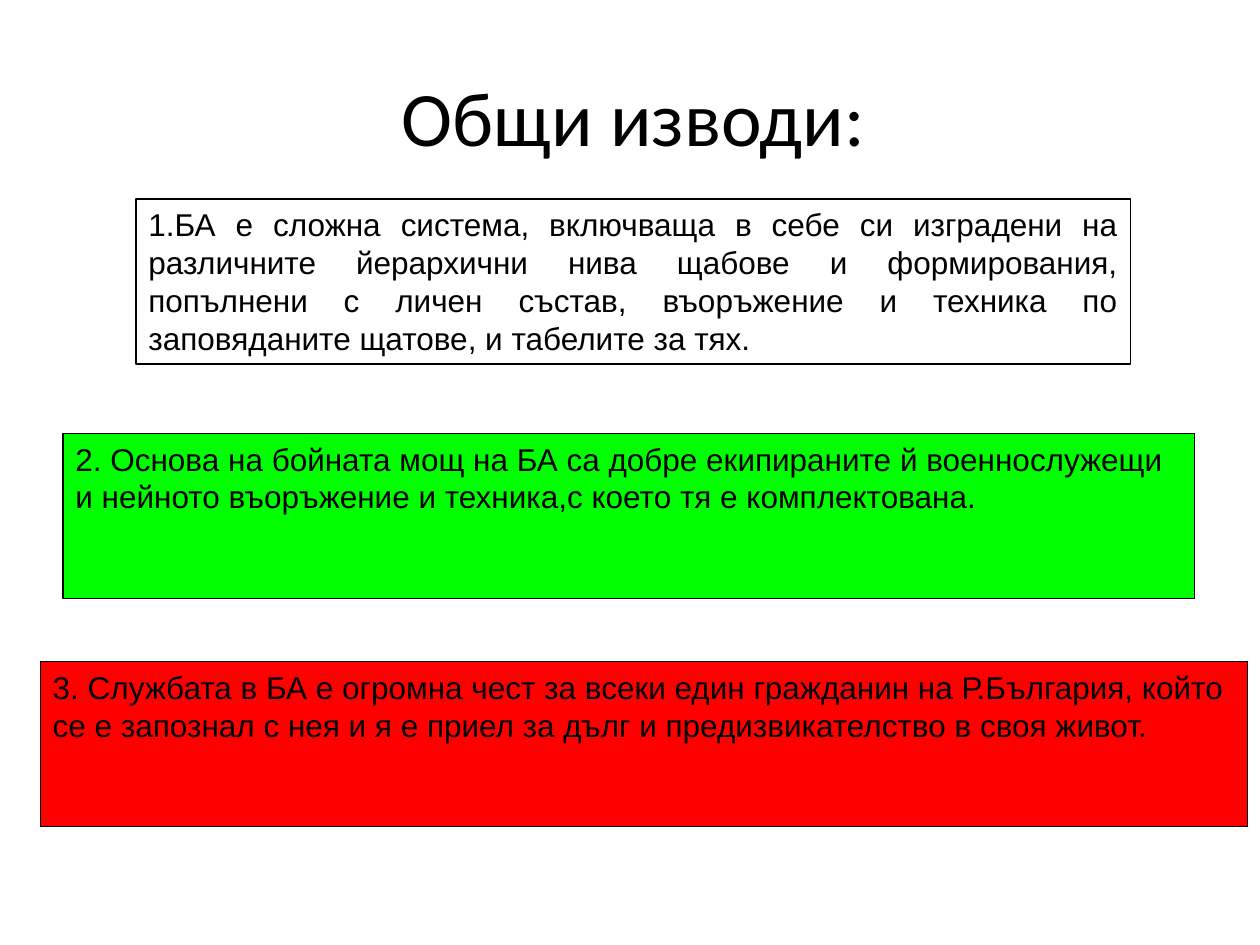
import pptx
import pptx.dml.color
import pptx.enum.shapes
import pptx.enum.text
import pptx.util
from dataclasses import dataclass

Inches = pptx.util.Inches
Pt = pptx.util.Pt
RGBColor = pptx.dml.color.RGBColor
PP_ALIGN = pptx.enum.text.PP_ALIGN
MSO_ANCHOR = pptx.enum.text.MSO_ANCHOR

BLACK = RGBColor(0x00, 0x00, 0x00)
WHITE = RGBColor(0xFF, 0xFF, 0xFF)
GREEN = RGBColor(0x00, 0xFF, 0x00)
RED = RGBColor(0xFF, 0x00, 0x00)

BOX_HEIGHT = 1.31


@dataclass
class Conclusion:
    left: float
    top: float
    width: float
    fill: RGBColor
    align: PP_ALIGN
    lines: list[str]


CONCLUSIONS = [
    Conclusion(1.08, 1.58, 7.89, WHITE, PP_ALIGN.JUSTIFY, [
        "1.БА е сложна система, включваща в себе си изградени на различните "
        "йерархични нива щабове и формирования, попълнени с личен състав, "
        "въоръжение и техника по заповяданите щатове, и табелите за тях."]),
    Conclusion(0.5, 3.44, 8.98, GREEN, PP_ALIGN.LEFT, [
        "2. Основа на бойната мощ на БА са добре екипираните й военнослужещи",
        "и нейното въоръжение и техника,с което тя е комплектована."]),
    Conclusion(0.32, 5.25, 9.58, RED, PP_ALIGN.LEFT, [
        "3. Службата в БА е огромна чест за всеки един гражданин на Р.България, който",
        "се е запознал с нея и я е приел за дълг и предизвикателство в своя живот."]),
]


def add_text(p, text: str, font: str, size: float, align: PP_ALIGN) -> None:
    p.alignment = align
    r = p.add_run()
    r.text = text
    r.font.name = font
    r.font.size = Pt(size)
    r.font.color.rgb = BLACK


def add_conclusion(s, item: Conclusion) -> None:
    sp = s.shapes.add_shape(
        pptx.enum.shapes.MSO_SHAPE.RECTANGLE, Inches(item.left), Inches(item.top),
        Inches(item.width), Inches(BOX_HEIGHT))
    sp.shadow.inherit = False
    sp.fill.solid()
    sp.fill.fore_color.rgb = item.fill
    sp.line.color.rgb = BLACK
    sp.line.width = Pt(0.75)
    tf = sp.text_frame
    tf.word_wrap = True
    tf.vertical_anchor = MSO_ANCHOR.TOP
    for i, line in enumerate(item.lines):
        p = tf.add_paragraph() if i else tf.paragraphs[0]
        add_text(p, line, "Arial", 18, item.align)


def main() -> None:
    prs = pptx.Presentation()
    prs.slide_width = Inches(10)
    prs.slide_height = Inches(7.5)
    s = prs.slides.add_slide(prs.slide_layouts[5])

    # Title
    title = s.shapes.title
    title.left, title.top = Inches(0.78), Inches(0.5)
    title.width, title.height = Inches(8.5), Inches(0.67)
    tf = title.text_frame
    tf.auto_size = pptx.enum.text.MSO_AUTO_SIZE.NONE
    tf.vertical_anchor = MSO_ANCHOR.TOP
    add_text(tf.paragraphs[0], "Общи изводи:", "Calibri", 44, PP_ALIGN.CENTER)

    # Numbered conclusions
    for item in CONCLUSIONS:
        add_conclusion(s, item)

    prs.save("out.pptx")


if __name__ == "__main__":
    main()
